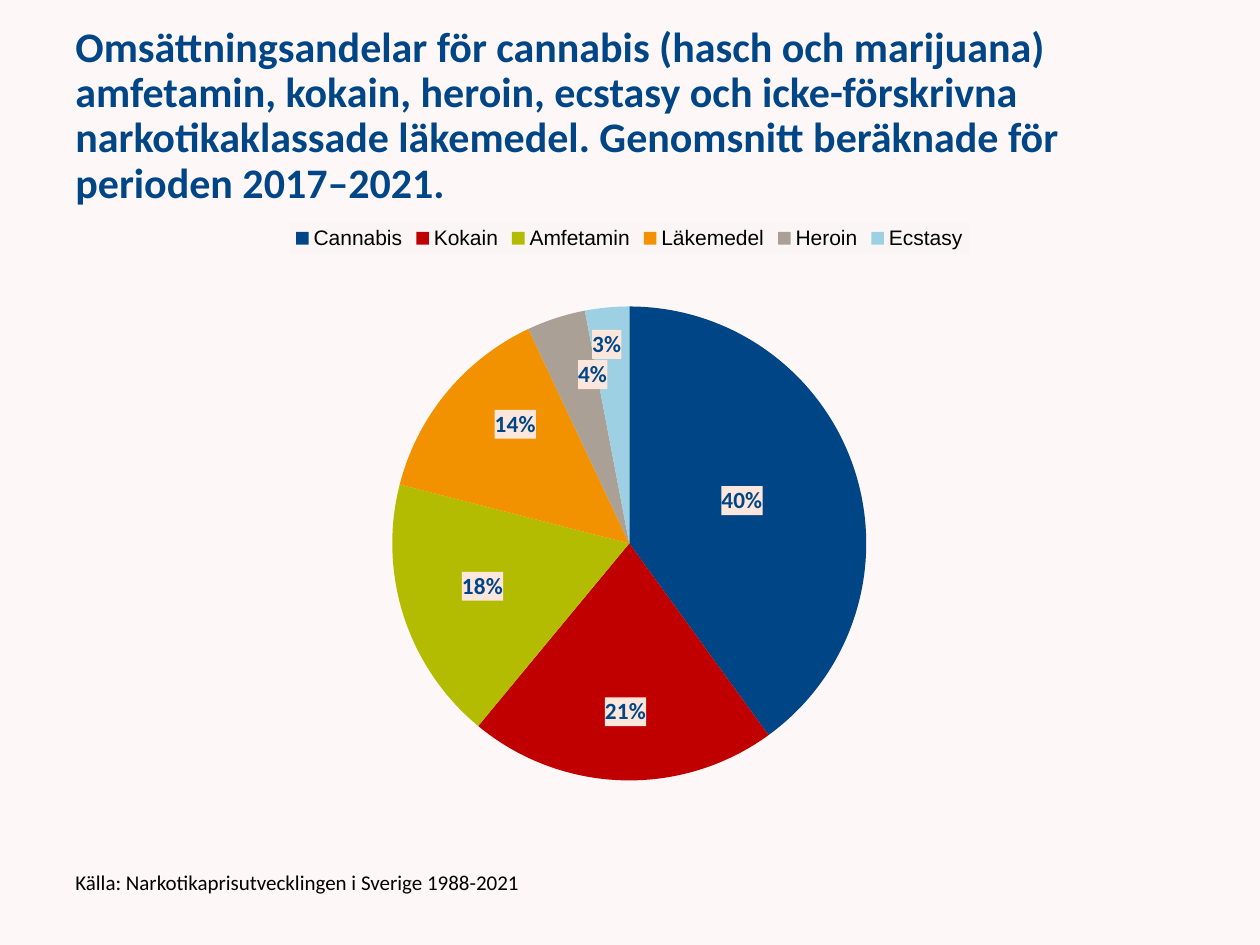
"""Build a slide with a pie chart of turnover shares on the Swedish drug market."""
from copy import deepcopy

from pptx import Presentation
from pptx.chart.data import CategoryChartData
from pptx.dml.color import RGBColor
from pptx.enum.chart import XL_CHART_TYPE, XL_LABEL_POSITION, XL_LEGEND_POSITION
from pptx.enum.text import MSO_ANCHOR
from pptx.oxml import parse_xml
from pptx.oxml.ns import nsdecls, qn
from pptx.util import Pt

BACKGROUND = RGBColor(0xFE, 0xF7, 0xF7)
LEGEND_FILL = RGBColor(0xFB, 0xF6, 0xF5)
LABEL_FILL = RGBColor(0xFD, 0xE6, 0xDC)
BLACK = RGBColor(0, 0, 0)
BLUE = RGBColor(0x00, 0x46, 0x87)
RED = RGBColor(0xC0, 0x00, 0x00)
GREEN = RGBColor(0xB3, 0xBC, 0x00)
ORANGE = RGBColor(0xF2, 0x92, 0x00)
GREY = RGBColor(0xAA, 0xA0, 0x96)
LIGHT_BLUE = RGBColor(0x9C, 0xD0, 0xE2)

SHARES = [
    ("Cannabis", 40, BLUE, (0, -0.01)),
    ("Kokain", 21, RED, (0, 0.08)),
    ("Amfetamin", 18, GREEN, (-0.03, 0.01)),
    ("Läkemedel", 14, ORANGE, (-0.02, -0.07)),
    ("Heroin", 4, GREY, (0, -0.09)),
    ("Ecstasy", 3, LIGHT_BLUE, (-0.01, -0.13)),
]


def chart_element(tag, content):
    return parse_xml(f'<c:{tag} {nsdecls("c", "a")}>{content}</c:{tag}>')


def manual_layout(**values):
    settings = "".join(f'<c:{name} val="{value}"/>' for name, value in values.items())
    return chart_element("layout", f"<c:manualLayout>{settings}</c:manualLayout>")


def solid_fill(color):
    return chart_element(
        "spPr", f'<a:solidFill><a:srgbClr val="{color}"/></a:solidFill><a:ln><a:noFill/></a:ln>'
    )


class SlideBuilder:
    def __init__(self, slide, font_name="Calibri"):
        self.slide = slide
        self.font_name = font_name
        slide.background.fill.solid()
        slide.background.fill.fore_color.rgb = BACKGROUND

    def style(self, font, size, color, bold=False, name=None):
        font.name = name or self.font_name
        font.size = Pt(size)
        font.bold = bold
        font.color.rgb = color

    def text(self, content, left, top, width, height, size, color, bold=False):
        shape = self.slide.shapes.add_textbox(Pt(left), Pt(top), Pt(width), Pt(height))
        frame = shape.text_frame
        frame.word_wrap = True
        frame.vertical_anchor = MSO_ANCHOR.MIDDLE
        paragraph = frame.paragraphs[0]
        paragraph.line_spacing = 0.9
        run = paragraph.add_run()
        run.text = content
        self.style(run.font, size, color, bold)

    def pie(self, shares, left, top, width, height):
        data = CategoryChartData(number_format="0")
        data.categories = [name for name, *_ in shares]
        data.add_series("Series 1", [value for _, value, *_ in shares])
        chart = self.slide.shapes.add_chart(
            XL_CHART_TYPE.PIE, Pt(left), Pt(top), Pt(width), Pt(height), data
        ).chart
        chart.has_title = False
        self.style(chart.font, 10, BLACK)
        self.legend(chart)
        plot_area = chart.plots[0]._element.getparent()
        for layout in plot_area.findall(qn("c:layout")):
            plot_area.remove(layout)
        plot_area.insert(0, manual_layout(
            layoutTarget="inner", xMode="edge", yMode="edge", x=0.29, y=0.15, w=0.42, h=0.76
        ))
        chart.plots[0].vary_by_categories = True
        series = chart.plots[0].series[0]
        for index, (_, _, color, _) in enumerate(shares):
            point_format = series.points[index].format
            point_format.fill.solid()
            point_format.fill.fore_color.rgb = color
            point_format.line.fill.background()
        self.labels(series, [offset for *_, offset in shares])

    def legend(self, chart):
        chart.has_legend = True
        legend = chart.legend
        legend.position = XL_LEGEND_POSITION.TOP
        legend.include_in_layout = False
        self.style(legend.font, 12, BLACK, name="Arial")
        legend._element.find(qn("c:txPr")).addprevious(solid_fill(LEGEND_FILL))

    def labels(self, series, offsets):
        labels = series.data_labels
        labels.show_value = False
        labels.show_percentage = True
        labels.number_format = "0%"
        labels.number_format_is_linked = False
        labels.position = XL_LABEL_POSITION.CENTER
        self.style(labels.font, 13.3, BLUE, bold=True)
        group = labels._element
        group.find(qn("c:txPr")).addprevious(solid_fill(LABEL_FILL))
        shared = [child for child in group if child.tag != qn("c:showLeaderLines")]
        for index, (x, y) in enumerate(offsets):
            label = chart_element("dLbl", f'<c:idx val="{index}"/>')
            label.append(manual_layout(x=x, y=y))
            label.extend(deepcopy(child) for child in shared)
            group.insert(index, label)


def main():
    presentation = Presentation()
    presentation.slide_width = Pt(720)
    presentation.slide_height = Pt(540)
    builder = SlideBuilder(presentation.slides.add_slide(presentation.slide_layouts[6]))
    builder.text(
        "Omsättningsandelar för cannabis (hasch och marijuana) amfetamin, kokain, heroin, "
        "ecstasy och icke-förskrivna narkotikaklassade läkemedel. Genomsnitt beräknade för "
        "perioden 2017–2021.",
        36, 21.6, 648, 90, 24, BLUE, bold=True,
    )
    builder.pie(SHARES, 35.3, 121.7, 648.7, 356.4)
    builder.text(
        "Källa: Narkotikaprisutvecklingen i Sverige 1988-2021",
        36, 491.8, 324, 26.6, 12, BLACK,
    )
    presentation.save("out.pptx")


if __name__ == "__main__":
    main()
